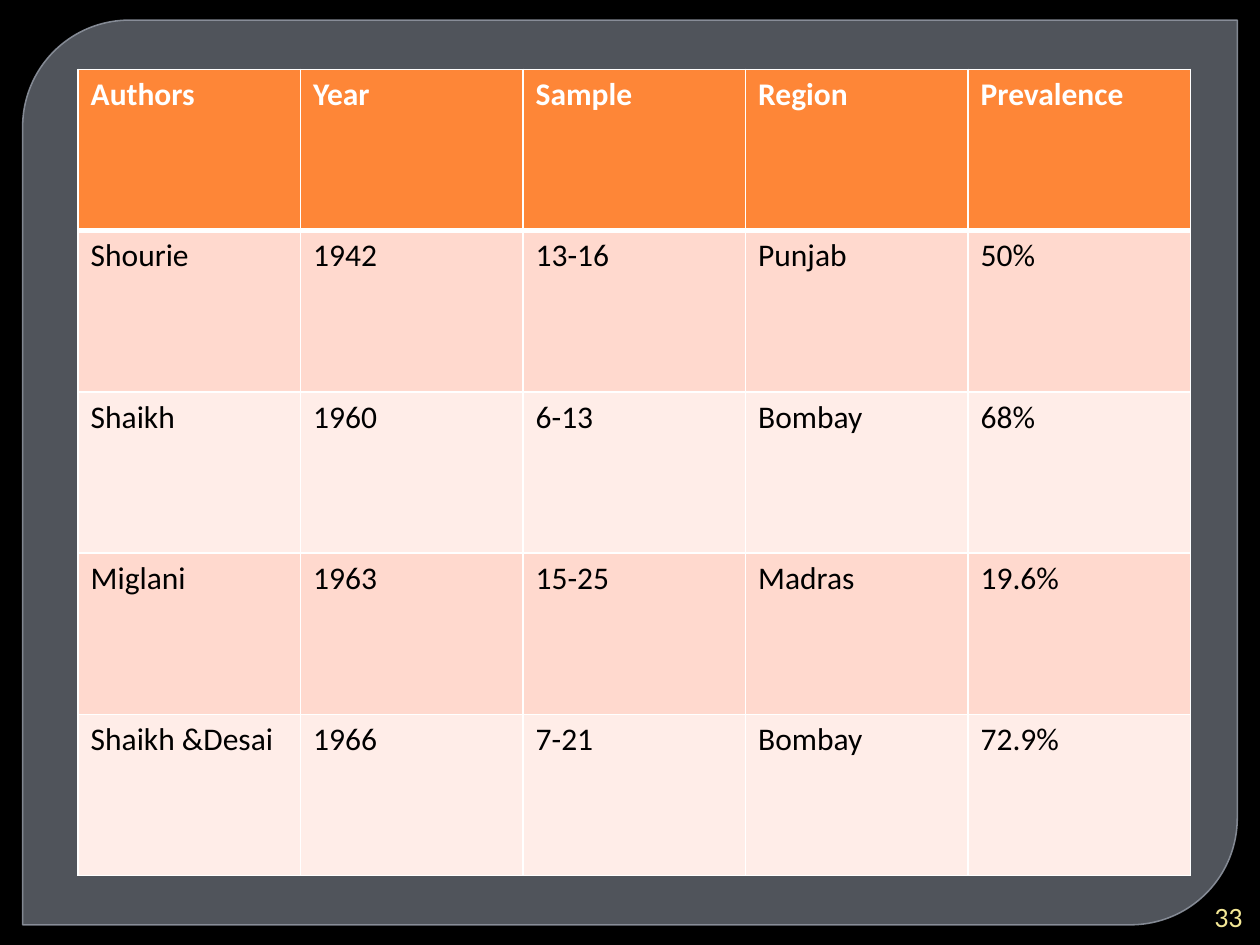
from pptx import Presentation
from pptx.dml.color import RGBColor
from pptx.enum.shapes import MSO_SHAPE as Shape
from pptx.enum.text import MSO_ANCHOR as Anchor, PP_ALIGN as Align
from pptx.oxml.ns import qn
from pptx.util import Inches, Pt
from lxml.etree import SubElement

STUDIES = [
    ("Authors", "Year", "Sample", "Region", "Prevalence"),
    ("Shourie", "1942", "13-16", "Punjab", "50%"),
    ("Shaikh", "1960", "6-13", "Bombay", "68%"),
    ("Miglani", "1963", "15-25", "Madras", "19.6%"),
    ("Shaikh &Desai", "1966", "7-21", "Bombay", "72.9%"),
]
HEADER_FILL = "FE8637"
BAND_FILLS = ("FFEDE8", "FFD9CE")
HEADER_FONT = {"name": "Calibri", "size": Pt(18), "bold": True}
BODY_FONT = {**HEADER_FONT, "bold": False}
NUMBER_FONT = {"name": "Calibri", "size": Pt(16)}


def set_color(color_format, value):
    """Give a colour format a hex colour."""
    color_format.rgb = RGBColor.from_string(value)


def set_fill(target, value):
    """Fill a background, shape or cell with a solid hex colour."""
    target.fill.solid()
    set_color(target.fill.fore_color, value)


def set_opacity(fill, percent):
    """Make a solid fill partly transparent."""
    color = fill.fore_color._xFill[0]
    SubElement(color, qn("a:alpha"), val=str(percent * 1000))


def write_text(paragraph, text, formats, color):
    """Add a formatted run to a paragraph."""
    run = paragraph.add_run()
    run.text = text
    for name, value in formats.items():
        setattr(run.font, name, value)
    set_color(run.font.color, color)


def add_panel(slide):
    """Add the translucent panel with two rounded corners."""
    panel = slide.shapes.add_shape(
        Shape.ROUND_2_DIAG_RECTANGLE,
        Inches(0.18), Inches(0.16), Inches(9.64), Inches(7.18))
    panel.shadow.inherit = False
    panel.adjustments[0] = 0.118
    panel.adjustments[1] = 0
    set_fill(panel, "7C828D")
    set_opacity(panel.fill, 65)
    panel.line.width = Pt(0.87)
    set_color(panel.line.color, "9096A1")
    set_opacity(panel.line.fill, 88)


def set_borders(cell, widths):
    """Draw white cell borders, with widths in points by side."""
    properties = cell._tc.get_or_add_tcPr()
    for index, (side, width) in enumerate(widths.items()):
        line = properties.makeelement(qn(f"a:ln{side}"), {"w": str(Pt(width))})
        fill = SubElement(line, qn("a:solidFill"))
        SubElement(fill, qn("a:srgbClr"), val="FFFFFF")
        properties.insert(index, line)


def add_study_table(slide):
    """Add the banded table of prevalence studies."""
    table = slide.shapes.add_table(
        len(STUDIES), len(STUDIES[0]),
        Inches(0.62), Inches(0.55), Inches(8.83), Inches(6.4)).table
    for row_index, study in enumerate(STUDIES):
        header = row_index == 0
        for column_index, text in enumerate(study):
            cell = table.cell(row_index, column_index)
            set_fill(cell, HEADER_FILL if header else BAND_FILLS[row_index % 2])
            set_borders(cell, {"L": 1, "R": 1,
                               "T": 3 if row_index == 1 else 1,
                               "B": 3 if header else 1})
            write_text(cell.text_frame.paragraphs[0], text,
                       HEADER_FONT if header else BODY_FONT,
                       "FFFFFF" if header else "000000")


def add_page_number(slide, number):
    """Add the page number in the bottom right corner."""
    box = slide.shapes.add_textbox(
        Inches(9.45), Inches(7.12), Inches(0.51), Inches(0.3))
    frame = box.text_frame
    frame.word_wrap = True
    frame.vertical_anchor = Anchor.MIDDLE
    paragraph = frame.paragraphs[0]
    paragraph.alignment = Align.RIGHT
    write_text(paragraph, number, NUMBER_FONT, "F4E896")


def main():
    """Build and save the slide."""
    presentation = Presentation()
    presentation.slide_width = Inches(10)
    presentation.slide_height = Inches(7.5)
    slide = presentation.slides.add_slide(presentation.slide_layouts[6])
    set_fill(slide.background, "000000")
    add_panel(slide)
    add_study_table(slide)
    add_page_number(slide, "33")
    presentation.save("out.pptx")


if __name__ == "__main__":
    main()
